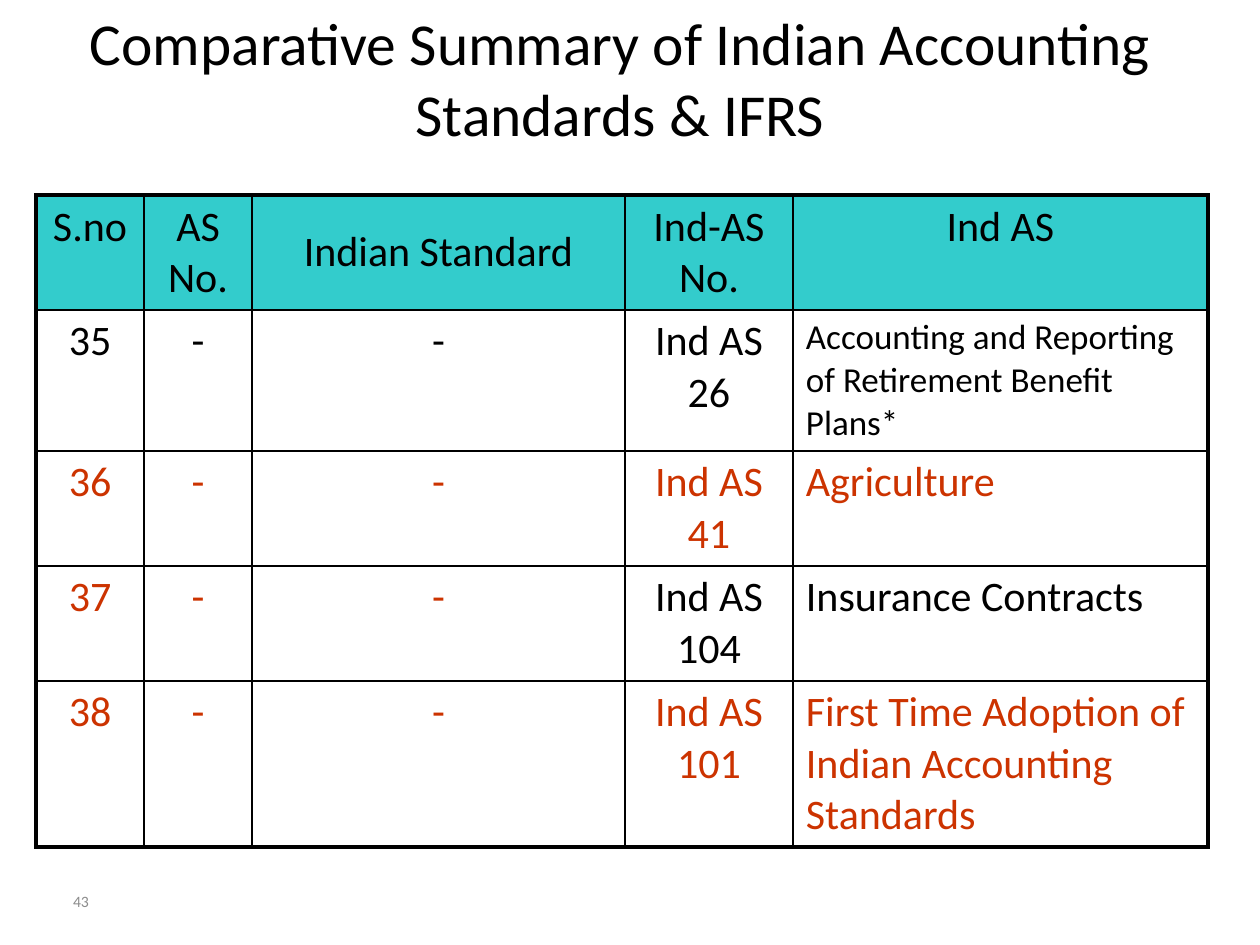
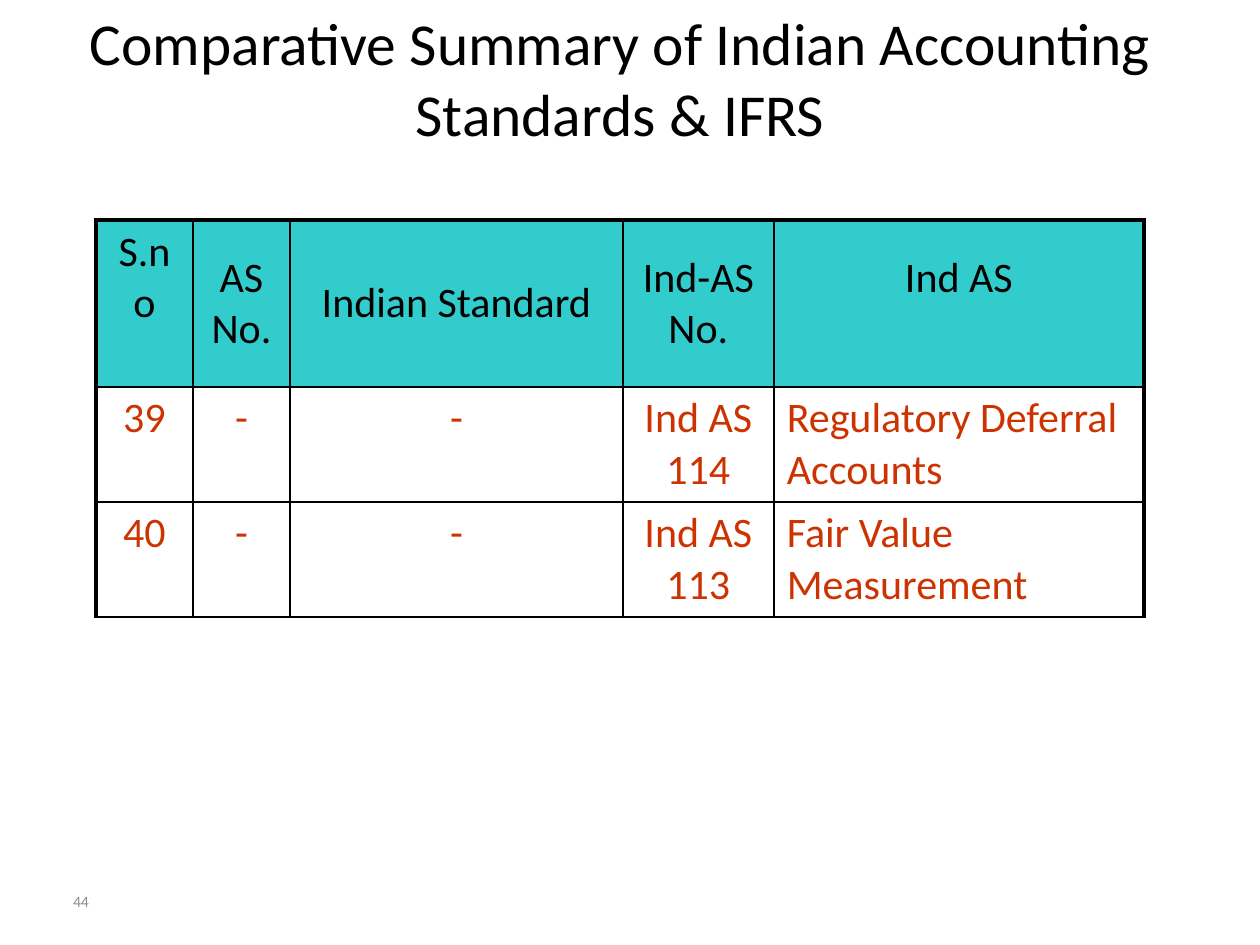
from lxml import etree
from pptx import Presentation
from pptx.dml.color import RGBColor
from pptx.enum.text import MSO_ANCHOR, PP_ALIGN
from pptx.oxml.ns import qn
from pptx.util import Emu, Pt

CENTER, LEFT = PP_ALIGN.CENTER, PP_ALIGN.LEFT
TOP, MIDDLE = MSO_ANCHOR.TOP, MSO_ANCHOR.MIDDLE
TITLE_ONLY = 5
FONT = "Calibri"
THIN, THICK = 1, 2.25
COLORS = {"text": "000000", "accent": "CC3300", "header": "33CCCC",
          "border": "000000", "number": "8C8C8C"}

TITLE = "Comparative Summary of Indian Accounting Standards & IFRS"
HEADINGS = ["S.no", "AS No.", "Indian Standard", "Ind-AS No.", "Ind AS"]
RAISED_HEADINGS = {"S.no", "Ind AS"}
SMALL_TEXT = {"Accounting and Reporting of Retirement Benefit Plans*"}
ALL_BLACK = ["text"] * 5
ALL_RED = ["accent"] * 5
RED_THEN_BLACK = ["accent"] * 3 + ["text"] * 2

SLIDES = [
    {"number": "43", "left": 36, "top": 195, "bottom_border": THICK,
     "columns": [108, 108, 373, 168, 415],
     "heights": [115, 141, 115, 115, 166],
     "standards": [
         ("35", "Ind AS 26", "Accounting and Reporting of Retirement Benefit Plans*", ALL_BLACK),
         ("36", "Ind AS 41", "Agriculture", ALL_RED),
         ("37", "Ind AS 104", "Insurance Contracts", RED_THEN_BLACK),
         ("38", "Ind AS 101", "First Time Adoption of Indian Accounting Standards", ALL_RED)]},
    {"number": "44", "left": 96, "top": 220, "bottom_border": THIN,
     "columns": [97, 97, 333, 151, 370],
     "heights": [167, 115, 115],
     "standards": [
         ("39", "Ind AS 114", "Regulatory Deferral Accounts", ALL_RED),
         ("40", "Ind AS 113", "Fair Value Measurement", ALL_RED)]},
]


def px(length):
    return Emu(round(length * 914400 / 126))


def rgb(name):
    return RGBColor.from_string(COLORS[name])


def style(paragraph, size, color, align):
    paragraph.alignment = align
    paragraph.font.name = FONT
    paragraph.font.size = Pt(size)
    paragraph.font.color.rgb = rgb(color)


def set_margins(holder, side, top, bottom):
    holder.margin_left = holder.margin_right = px(side)
    holder.margin_top, holder.margin_bottom = px(top), px(bottom)


def set_borders(cell, widths):
    properties = cell._tc.get_or_add_tcPr()
    for side, width in widths.items():
        line = etree.SubElement(properties, qn(f"a:ln{side}"), w=str(Pt(width)))
        fill = etree.SubElement(line, qn("a:solidFill"))
        etree.SubElement(fill, qn("a:srgbClr"), val=COLORS["border"])


def add_title(slide):
    title = slide.shapes.title
    title.left, title.top, title.width, title.height = px(32), px(0), px(1176), px(157)
    frame = title.text_frame
    frame.text = TITLE
    frame.vertical_anchor = TOP
    set_margins(frame, 13, 6, 6)
    style(frame.paragraphs[0], 34, "text", CENTER)


def add_number(slide, number):
    frame = slide.shapes.add_textbox(px(63), px(876), px(294), px(50)).text_frame
    frame.word_wrap = True
    frame.text = number
    frame.vertical_anchor = MIDDLE
    set_margins(frame, 10, 5, 5)
    style(frame.paragraphs[0], 9, "number", LEFT)


def add_standards(slide, page):
    rows = [(HEADINGS, ALL_BLACK)]
    rows += [([serial, "-", "-", code, name], colors)
             for serial, code, name, colors in page["standards"]]
    last_row, last_column = len(rows) - 1, len(HEADINGS) - 1
    table = slide.shapes.add_table(
        len(rows), len(HEADINGS), px(page["left"]), px(page["top"]),
        px(sum(page["columns"])), px(sum(page["heights"]))).table
    table.first_row = table.horz_banding = False
    for column, width in zip(table.columns, page["columns"]):
        column.width = px(width)
    for row, height in zip(table.rows, page["heights"]):
        row.height = px(height)

    for r, (texts, colors) in enumerate(rows):
        for c, (text, color) in enumerate(zip(texts, colors)):
            cell = table.cell(r, c)
            is_heading = r == 0
            cell.text = text
            cell.vertical_anchor = MIDDLE if is_heading else TOP
            raised = is_heading and text in RAISED_HEADINGS
            set_margins(cell, 13, 6, 57 if raised else 6)
            set_borders(cell, {
                "L": THICK if c == 0 else THIN,
                "R": THICK if c == last_column else THIN,
                "T": THICK if is_heading else THIN,
                "B": page["bottom_border"] if r == last_row else THIN})
            if is_heading:
                cell.fill.solid()
                cell.fill.fore_color.rgb = rgb("header")
            else:
                cell.fill.background()
            align = LEFT if c == last_column and not is_heading else CENTER
            style(cell.text_frame.paragraphs[0], 20 if text in SMALL_TEXT else 24, color, align)


def main():
    deck = Presentation()
    deck.slide_width, deck.slide_height = px(1260), px(945)
    for page in SLIDES:
        slide = deck.slides.add_slide(deck.slide_layouts[TITLE_ONLY])
        add_number(slide, page["number"])
        add_standards(slide, page)
        add_title(slide)
    deck.save("out.pptx")


if __name__ == "__main__":
    main()
